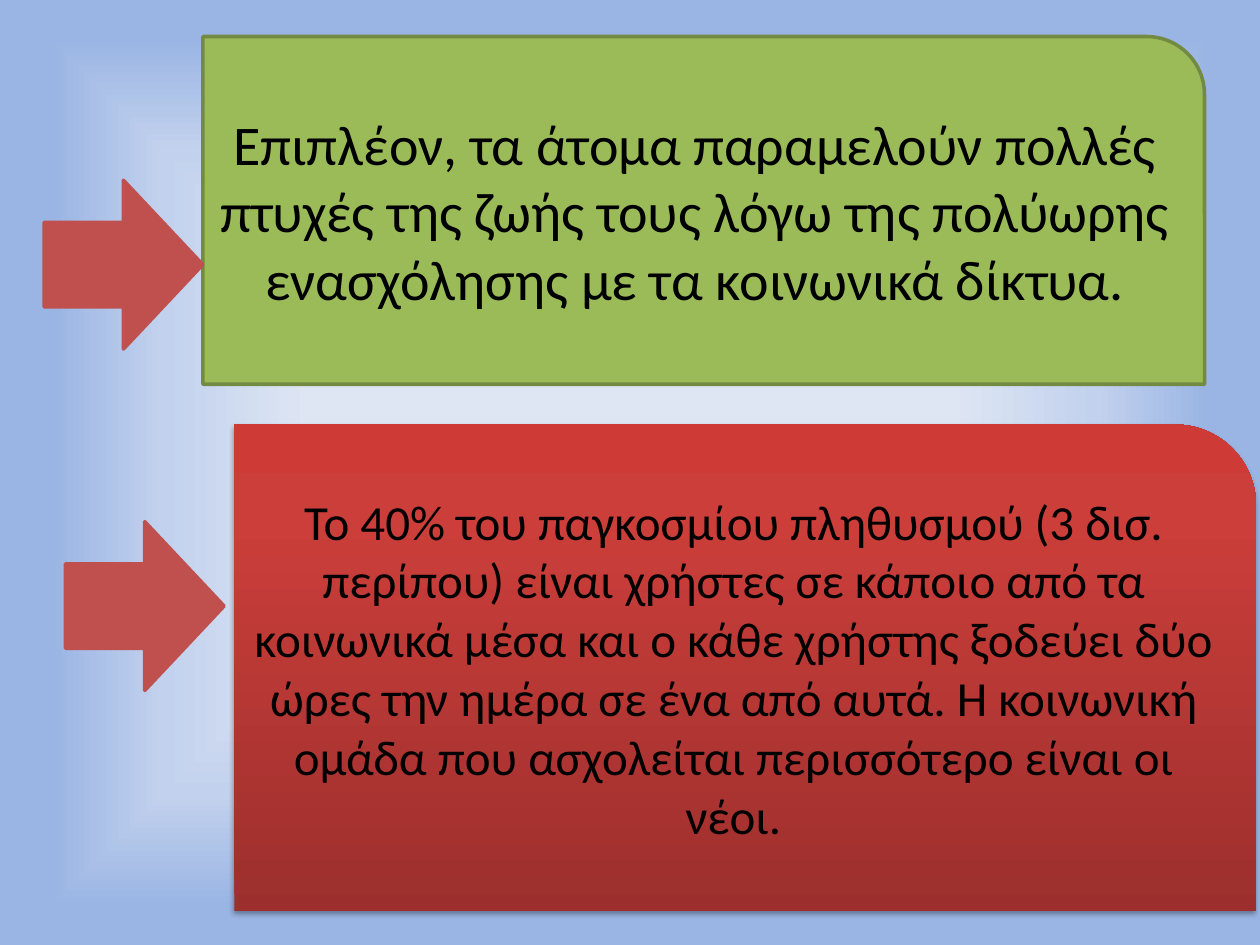
"""Build a slide with two statement panels, each pointed at by an arrow."""

from dataclasses import dataclass
from typing import Optional

from lxml.etree import SubElement
from pptx import Presentation
from pptx.dml.color import RGBColor
from pptx.enum.shapes import MSO_SHAPE
from pptx.enum.text import MSO_ANCHOR, PP_ALIGN
from pptx.oxml.ns import qn
from pptx.shapes.autoshape import Shape
from pptx.slide import Slide
from pptx.util import Pt

BLACK = RGBColor(0x00, 0x00, 0x00)
GREEN = RGBColor(0x9B, 0xBB, 0x59)
DARK_GREEN = RGBColor(0x73, 0x8A, 0x42)
RED = RGBColor(0xC0, 0x50, 0x4D)
PANEL_REDS = [
    (0, RGBColor(0x9C, 0x2F, 0x2D)),
    (80, RGBColor(0xCB, 0x3E, 0x3A)),
    (100, RGBColor(0xCE, 0x3B, 0x37)),
]
BACKGROUND_BLUES = [
    (4, RGBColor(0xE1, 0xE8, 0xF5)),
    (37, RGBColor(0xDE, 0xE6, 0xF4)),
    (68, RGBColor(0xC2, 0xD1, 0xED)),
    (92, RGBColor(0x9A, 0xB5, 0xE4)),
]
FONT = "Calibri"
LINE_WIDTH = 2
ARROW_WIDTH, ARROW_HEIGHT = 90.7, 96.5


@dataclass
class Panel:
    """A rounded statement box with its pointing arrow's position."""

    left: float
    top: float
    width: float
    height: float
    text: str
    text_size: int
    arrow_left: float
    arrow_top: float
    fill: Optional[RGBColor] = None
    outline: Optional[RGBColor] = None


PANELS = [
    Panel(
        115.9, 20.9, 572.4, 198.7,
        "Επιπλέον, τα άτομα παραμελούν πολλές πτυχές της ζωής τους λόγω της "
        "πολύωρης ενασχόλησης με τα κοινωνικά δίκτυα.",
        32, 25.2, 103, GREEN, DARK_GREEN,
    ),
    Panel(
        133.9, 242.6, 583.9, 277.9,
        "Το 40% του παγκοσμίου πληθυσμού (3 δισ. περίπου) είναι χρήστες σε "
        "κάποιο από τα κοινωνικά μέσα και ο κάθε χρήστης ξοδεύει δύο ώρες την "
        "ημέρα σε ένα από αυτά. Η κοινωνική ομάδα που ασχολείται περισσότερο "
        "είναι οι νέοι.",
        28, 37.4, 298.1,
    ),
]


def set_stops(gradient, stops: list[tuple[int, RGBColor]]) -> None:
    """Replace the colour stops of a gradient element."""
    stop_list = gradient.find(qn("a:gsLst"))
    for old_stop in list(stop_list):
        stop_list.remove(old_stop)
    for percent, color in stops:
        stop = SubElement(stop_list, qn("a:gs"), pos=str(percent * 1000))
        SubElement(stop, qn("a:srgbClr"), val=str(color))


def paint_background(slide: Slide) -> None:
    """Fill the background with a gradient spreading from the centre."""
    slide.background.fill.gradient()
    gradient = slide.element.find(".//" + qn("a:gradFill"))
    set_stops(gradient, BACKGROUND_BLUES)
    gradient.remove(gradient.find(qn("a:lin")))
    spread = SubElement(gradient, qn("a:path"), {"path": "shape"})
    sides = dict.fromkeys("ltrb", "50000")
    SubElement(spread, qn("a:fillToRect"), sides)


def add_drop_shadow(shape: Shape) -> None:
    """Cast a soft shadow straight down."""
    effects = shape.element.spPr.find(qn("a:effectLst"))
    shadow = SubElement(
        effects, qn("a:outerShdw"), blurRad=str(Pt(3.1)), dist=str(Pt(1.8)),
        dir="5400000", rotWithShape="0",
    )
    color = SubElement(shadow, qn("a:srgbClr"), val=str(BLACK))
    SubElement(color, qn("a:alpha"), val="35000")


def set_solid(shape: Shape, fill: RGBColor, outline: RGBColor) -> None:
    """Give a shape a plain fill and outline."""
    shape.fill.solid()
    shape.fill.fore_color.rgb = fill
    shape.line.color.rgb = outline
    shape.line.width = Pt(LINE_WIDTH)


def draw_panel(slide: Slide, panel: Panel) -> None:
    """Draw a statement box."""
    box = slide.shapes.add_shape(
        MSO_SHAPE.ROUND_1_RECTANGLE,
        Pt(panel.left), Pt(panel.top), Pt(panel.width), Pt(panel.height),
    )
    box.shadow.inherit = False
    if panel.fill is not None:
        set_solid(box, panel.fill, panel.outline)
    else:
        box.fill.gradient()
        box.fill.gradient_angle = 90
        set_stops(box.element.spPr.find(qn("a:gradFill")), PANEL_REDS)
        box.line.fill.background()
        add_drop_shadow(box)

    frame = box.text_frame
    frame.text = panel.text
    frame.word_wrap = True
    frame.vertical_anchor = MSO_ANCHOR.MIDDLE
    statement = frame.paragraphs[0]
    statement.alignment = PP_ALIGN.CENTER
    font = statement.runs[0].font
    font.name = FONT
    font.size = Pt(panel.text_size)
    font.color.rgb = BLACK


def draw_arrow(slide: Slide, panel: Panel) -> None:
    """Draw the arrow that points at a statement box."""
    arrow = slide.shapes.add_shape(
        MSO_SHAPE.RIGHT_ARROW,
        Pt(panel.arrow_left), Pt(panel.arrow_top),
        Pt(ARROW_WIDTH), Pt(ARROW_HEIGHT),
    )
    arrow.shadow.inherit = False
    set_solid(arrow, RED, RED)


def main() -> None:
    """Build and save the presentation."""
    presentation = Presentation()
    presentation.slide_width = Pt(720)
    presentation.slide_height = Pt(540)
    slide = presentation.slides.add_slide(presentation.slide_layouts[6])
    paint_background(slide)
    for panel in PANELS:
        draw_panel(slide, panel)
    for panel in PANELS:
        draw_arrow(slide, panel)
    presentation.save("out.pptx")


if __name__ == "__main__":
    main()
